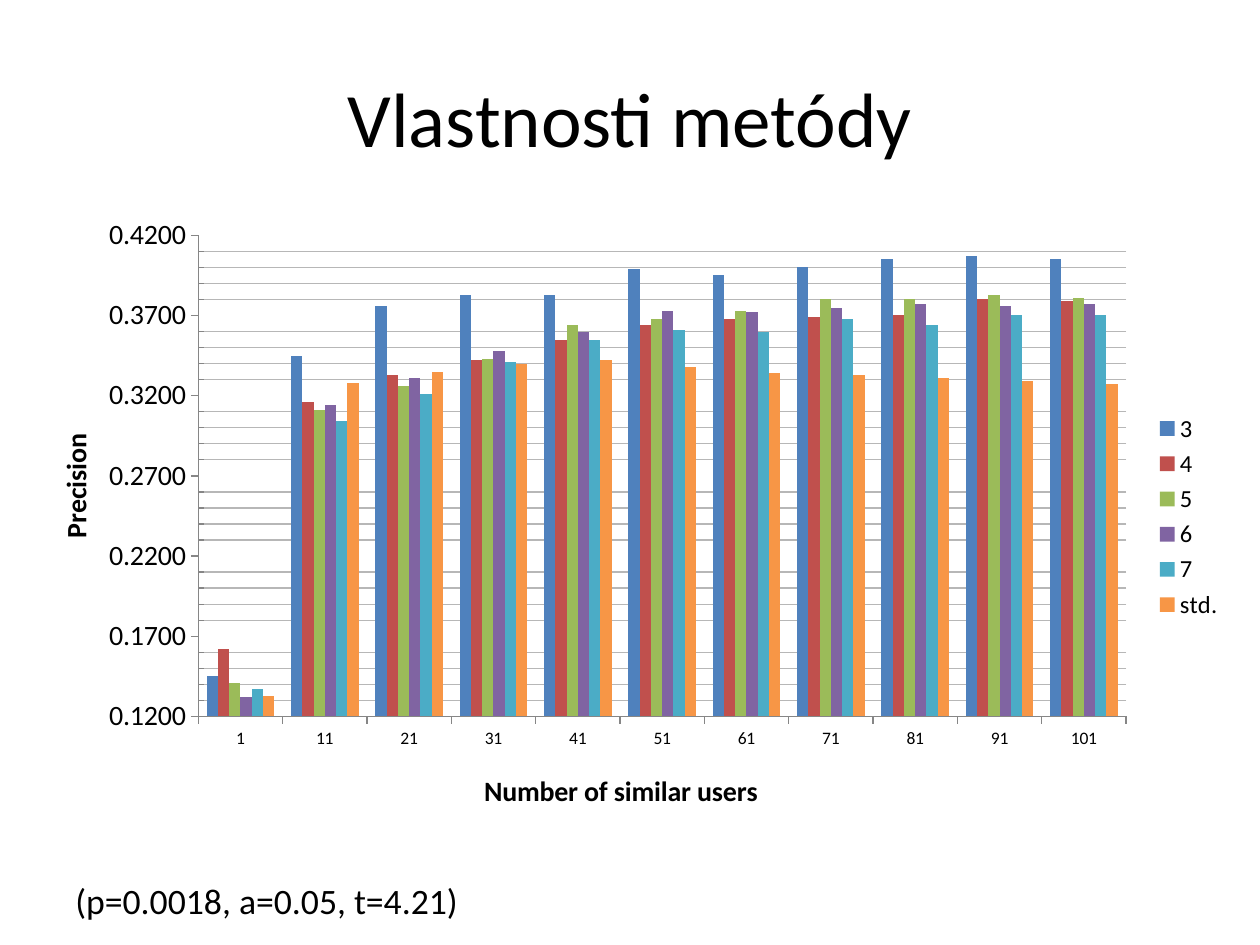
from lxml import etree
from pptx import Presentation
from pptx.chart.data import CategoryChartData
from pptx.dml.color import RGBColor
from pptx.enum.chart import XL_CHART_TYPE, XL_LEGEND_POSITION, XL_TICK_MARK
from pptx.enum.text import MSO_ANCHOR, PP_ALIGN
from pptx.oxml.ns import qn
from pptx.util import Inches, Pt

CLUSTERED = XL_CHART_TYPE.COLUMN_CLUSTERED
LEGEND_RIGHT = XL_LEGEND_POSITION.RIGHT
TICK_INSIDE, TICK_OUTSIDE = XL_TICK_MARK.INSIDE, XL_TICK_MARK.OUTSIDE
MIDDLE = MSO_ANCHOR.MIDDLE
LEFT, CENTER = PP_ALIGN.LEFT, PP_ALIGN.CENTER

FONT = "Calibri"
BLACK, AXIS_GRAY, GRID_GRAY = "000000", "868686", "B7B7B7"
LINE_WIDTH = Pt(0.75)

CATEGORIES = [str(count) for count in range(1, 102, 10)]
SERIES = [
    ("3", "4F81BD", (0.145, 0.345, 0.376, 0.383, 0.383, 0.399, 0.395, 0.4, 0.405, 0.407, 0.405)),
    ("4", "C0504D", (0.162, 0.316, 0.333, 0.342, 0.355, 0.364, 0.368, 0.369, 0.37, 0.38, 0.379)),
    ("5", "9BBB59", (0.141, 0.311, 0.326, 0.343, 0.364, 0.368, 0.373, 0.38, 0.38, 0.383, 0.381)),
    ("6", "8064A2", (0.132, 0.314, 0.331, 0.348, 0.36, 0.373, 0.372, 0.375, 0.377, 0.376, 0.377)),
    ("7", "4BACC6", (0.137, 0.304, 0.321, 0.341, 0.355, 0.361, 0.36, 0.368, 0.364, 0.37, 0.37)),
    ("std.", "F79646", (0.133, 0.328, 0.335, 0.34, 0.342, 0.338, 0.334, 0.333, 0.331, 0.329, 0.327)),
]


def rgb(value):
    return RGBColor.from_string(value)


def set_values(target, values):
    for name, value in values.items():
        setattr(target, name, value)


def format_font(font, size, bold=False):
    set_values(font, {"name": FONT, "size": Pt(size), "bold": bold})
    font.color.rgb = rgb(BLACK)


def add_text(slide, box, text, size, alignment):
    frame = slide.shapes.add_textbox(*map(Inches, box)).text_frame
    set_values(frame, {"word_wrap": True, "vertical_anchor": MIDDLE})
    paragraph = frame.paragraphs[0]
    paragraph.alignment = alignment
    run = paragraph.add_run()
    run.text = text
    format_font(run.font, size)


def set_layout(element, position, index, inner=False):
    """Place a chart part by fractions of the chart: x, y and, if given, w, h."""
    for old in element.findall(qn("c:layout")):
        element.remove(old)
    layout = etree.Element(qn("c:layout"))
    manual = etree.SubElement(layout, qn("c:manualLayout"))
    values = [("layoutTarget", "inner")] if inner else []
    values += [("xMode", "edge"), ("yMode", "edge"), *zip("xywh", position)]
    for name, value in values:
        etree.SubElement(manual, qn("c:" + name)).set("val", str(value))
    element.insert(index, layout)


def color_minor_gridlines(chart, color):
    gridlines = chart.element.find(".//" + qn("c:minorGridlines"))
    properties = etree.SubElement(gridlines, qn("c:spPr"))
    line = etree.SubElement(properties, qn("a:ln"), w=str(LINE_WIDTH))
    fill = etree.SubElement(line, qn("a:solidFill"))
    etree.SubElement(fill, qn("a:srgbClr"), val=color)


def format_axis(axis, title, label_size):
    axis.major_tick_mark = TICK_OUTSIDE
    format_font(axis.tick_labels.font, label_size)
    axis.format.line.color.rgb = rgb(AXIS_GRAY)
    axis.format.line.width = LINE_WIDTH
    frame = axis.axis_title.text_frame
    frame.text = title
    format_font(frame.paragraphs[0].runs[0].font, 16, bold=True)


def add_precision_chart(slide, box):
    data = CategoryChartData(number_format="0.0000")
    data.categories = CATEGORIES
    for name, _, values in SERIES:
        data.add_series(name, values)
    chart = slide.shapes.add_chart(CLUSTERED, *map(Inches, box), data).chart
    format_font(chart.font, 10)
    set_values(chart, {"has_title": False, "has_legend": True})
    set_values(chart.legend, {"position": LEGEND_RIGHT, "include_in_layout": False})
    format_font(chart.legend.font, 14)

    plot = chart.plots[0]
    set_values(plot, {"gap_width": 150, "overlap": 0, "vary_by_categories": False})
    for series, (_, color, _) in zip(plot.series, SERIES):
        series.format.fill.solid()
        series.format.fill.fore_color.rgb = rgb(color)

    value_axis = chart.value_axis
    format_axis(chart.category_axis, "Number of similar users", 10)
    format_axis(value_axis, "Precision", 16)
    set_values(value_axis, {
        "minimum_scale": 0.12, "maximum_scale": 0.42,
        "major_unit": 0.05, "minor_unit": 0.01,
        "has_major_gridlines": False, "has_minor_gridlines": True,
        "minor_tick_mark": TICK_INSIDE,
    })
    set_values(value_axis.tick_labels, {
        "number_format": "0.0000", "number_format_is_linked": False,
    })
    color_minor_gridlines(chart, GRID_GRAY)

    plot_area = chart.element.find(".//" + qn("c:plotArea"))
    set_layout(plot_area, (0.15, 0.05, 0.76, 0.77), 0, inner=True)
    title_positions = ((0.38, 0.9), (0.03, 0.36))
    for title, position in zip(plot_area.iter(qn("c:title")), title_positions):
        set_layout(title, position, 1)


def main():
    presentation = Presentation()
    set_values(presentation, {"slide_width": Inches(10), "slide_height": Inches(7.5)})
    slide = presentation.slides.add_slide(presentation.slide_layouts[6])
    add_text(slide, (0.5, 0.3, 9, 1.25), "Vlastnosti metódy", 44, CENTER)
    add_precision_chart(slide, (0.12, 1.62, 9.69, 4.96))
    add_text(slide, (0.5, 6.92, 9, 0.45), "(p=0.0018, a=0.05, t=4.21)", 20.4, LEFT)
    presentation.save("out.pptx")


if __name__ == "__main__":
    main()
